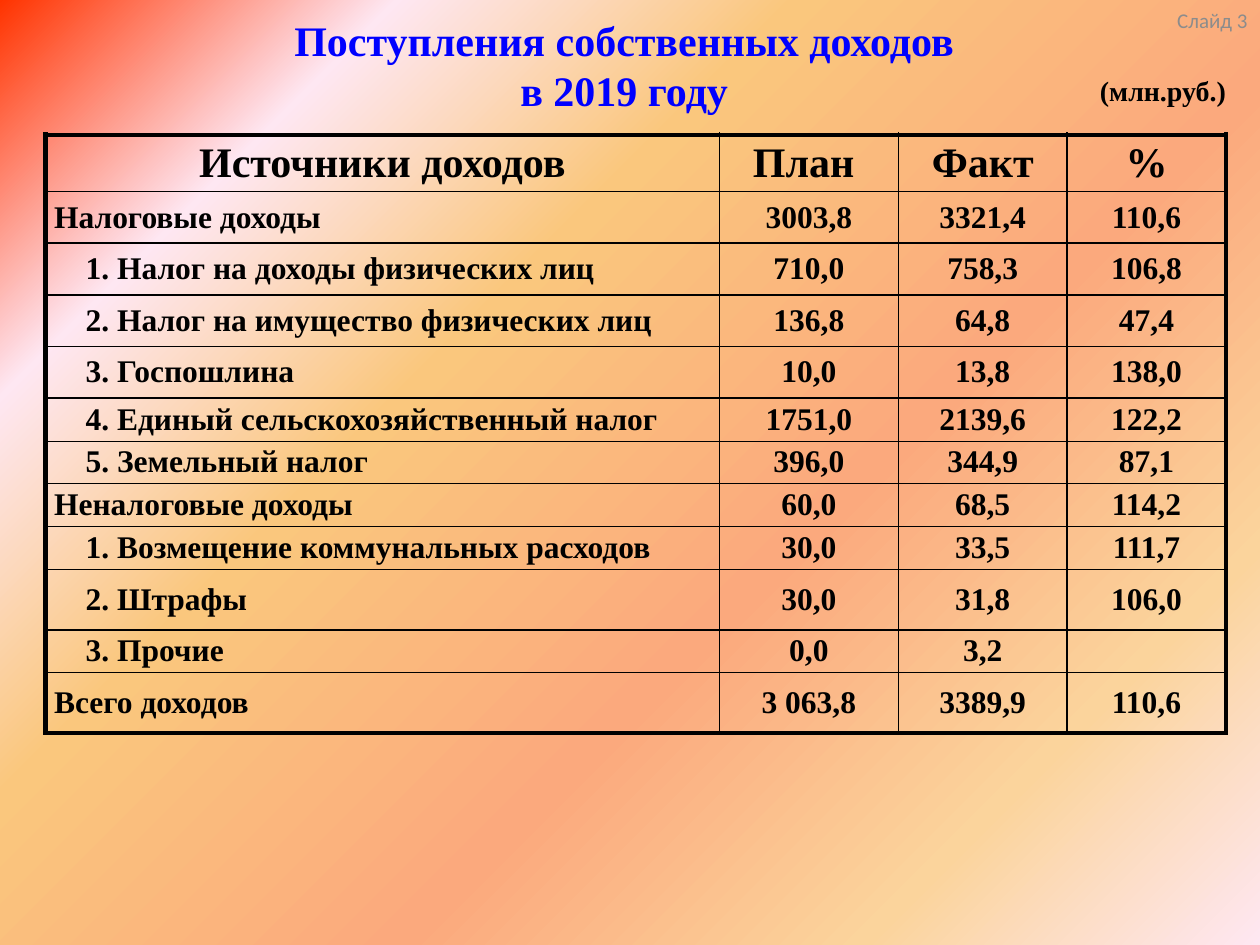
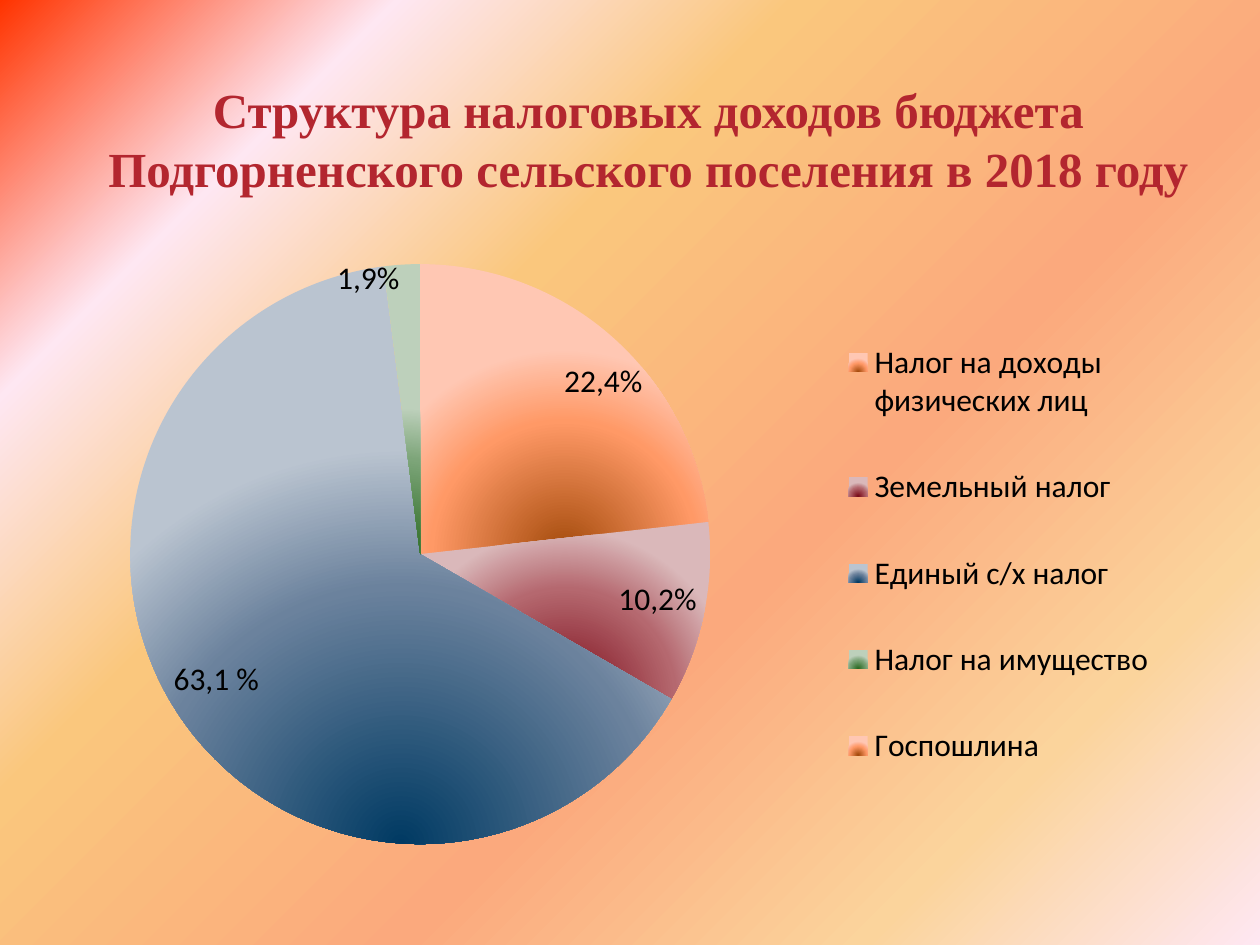
from dataclasses import dataclass

from lxml import etree
from pptx import Presentation
from pptx.chart.data import CategoryChartData
from pptx.dml.color import RGBColor
from pptx.enum import chart as charts, text
from pptx.oxml.ns import qn
from pptx.util import Inches, Pt

COLOURS = {"blue": "0000FF", "red": "B3262F", "black": "000000", "grey": "8C8C8C"}
BACKGROUND = [(0, "FF3300"), (18, "FEE7F2"), (36, "FAC77D"),
              (61, "FBA97D"), (82, "FBD49C"), (100, "FEE7F2")]
SERIF, SANS = "Times New Roman", "Calibri"
CENTRE, LEFT, RIGHT = text.PP_ALIGN.CENTER, text.PP_ALIGN.LEFT, text.PP_ALIGN.RIGHT
MIDDLE, TOP = text.MSO_ANCHOR.MIDDLE, text.MSO_ANCHOR.TOP


@dataclass
class Style:
    size: float
    colour: str = "black"
    font: str = SERIF
    bold: bool = True
    align: int = CENTRE


@dataclass
class IncomeRow:
    source: str
    plan: str
    fact: str
    percent: str
    height: float
    indent: float = 0
    rule: float = 1  # width of the line below, in points


@dataclass
class TaxSlice:
    name: str
    share: int
    label: str
    label_shift: tuple[float, float]  # fractions of the chart
    shades: tuple[str, str, str]  # from the centre of the glow outwards


ORANGE = ("A34A0B", "FF9966", "FFC7B3")
SUB = 0.25
INCOME = [
    IncomeRow("Источники доходов", "План ", "Факт", "%", 0.45),
    IncomeRow("Налоговые доходы", "3003,8", "3321,4", "110,6", 0.41),
    IncomeRow("1. Налог на доходы физических лиц", "710,0", "758,3", "106,8", 0.41, SUB),
    IncomeRow("2. Налог на имущество физических лиц", "136,8", "64,8", "47,4", 0.41, SUB),
    IncomeRow("3. Госпошлина", "10,0", "13,8", "138,0", 0.41, SUB),
    IncomeRow("4. Единый сельскохозяйственный налог", "1751,0", "2139,6", "122,2", 0.34, SUB, 0.5),
    IncomeRow("5. Земельный налог", "396,0", "344,9", "87,1", 0.34, SUB),
    IncomeRow("Неналоговые доходы", "60,0", "68,5", "114,2", 0.34),
    IncomeRow("1. Возмещение коммунальных расходов", "30,0", "33,5", "111,7", 0.34, SUB, 0.5),
    IncomeRow("2. Штрафы", "30,0", "31,8", "106,0", 0.48, SUB),
    IncomeRow("3. Прочие", "0,0", "3,2", "", 0.34, SUB),
    IncomeRow("Всего доходов", "3 063,8", "3389,9", "110,6", 0.48, 0, 3),
]
COLUMN_WIDTHS = [5.35, 1.42, 1.34, 1.26]
TAXES = [
    TaxSlice("Налог на доходы физических лиц", 23, "22,4%", (0.03, 0.03), ORANGE),
    TaxSlice("Земельный налог", 10, "10,2%", (0, 0.01), ("7A0A18", "B5686F", "DAB8BA")),
    TaxSlice("Единый с/х налог", 64, "63,1 %", (-0.01, -0.02), ("003A63", "6B829D", "BAC4D0")),
    TaxSlice("Налог на имущество", 2, "1,9%", (-0.03, -0.02), ("2A6A22", "7DA579", "BDD0BB")),
    TaxSlice("Госпошлина", 0, "0,3%", (0.02, -0.02), ORANGE),
]


def colour(name: str) -> RGBColor:
    return RGBColor.from_string(COLOURS[name])


def style_font(font, style: Style) -> None:
    font.name, font.size, font.bold = style.font, Pt(style.size), style.bold
    font.color.rgb = colour(style.colour)


def write(para, content: str, style: Style) -> None:
    """Fill a paragraph run by run, with a line break at each newline."""
    para.alignment = style.align
    for number, line in enumerate(content.split("\n")):
        if number:
            para.add_line_break()
        if line:
            span = para.add_run()
            span.text = line
            style_font(span.font, style)


def add_text(page, at: tuple, content: str, style: Style, anchor=MIDDLE):
    box = page.shapes.add_textbox(*map(Inches, at))
    frame = box.text_frame
    frame.word_wrap = True
    frame.vertical_anchor = anchor
    write(frame.paragraphs[0], content, style)
    return box


def replace_solid(root, stops: list, angle: int | None = None) -> None:
    """Turn the first solid fill in root into a linear gradient, or a glow from below."""
    solid = next(root.iter(qn("a:solidFill")))
    gradient = etree.Element(qn("a:gradFill"), rotWithShape="1")
    stop_list = etree.SubElement(gradient, qn("a:gsLst"))
    for position, value in stops:
        stop = etree.SubElement(stop_list, qn("a:gs"), pos=str(position * 1000))
        etree.SubElement(stop, qn("a:srgbClr"), val=value)
    if angle is None:
        glow = etree.SubElement(gradient, qn("a:path"), path="circle")
        etree.SubElement(glow, qn("a:fillToRect"), l="50000", t="100000", r="50000", b="0")
    else:
        etree.SubElement(gradient, qn("a:lin"), ang=str(angle * 60000), scaled="0")
    solid.getparent().replace(solid, gradient)


def add_page(deck):
    page = deck.slides.add_slide(deck.slide_layouts[6])
    fill = page.background.fill
    fill.solid()
    fill.fore_color.rgb = colour("black")
    replace_solid(page._element, BACKGROUND, angle=45)
    return page


def set_borders(cell, **widths: float) -> None:
    properties = cell._tc.get_or_add_tcPr()
    for side in "LRTB":
        line = etree.SubElement(properties, qn(f"a:ln{side}"), w=str(Pt(widths[side])))
        fill = etree.SubElement(line, qn("a:solidFill"))
        etree.SubElement(fill, qn("a:srgbClr"), val=COLOURS["black"])


def add_income_table(page) -> None:
    height = sum(row.height for row in INCOME)
    frame = page.shapes.add_table(len(INCOME), len(COLUMN_WIDTHS), Inches(0.36), Inches(1.07),
                                  Inches(sum(COLUMN_WIDTHS)), Inches(height))
    table = frame.table
    table.first_row = table.horz_banding = False
    for column, width in zip(table.columns, COLUMN_WIDTHS):
        column.width = Inches(width)
    last = len(COLUMN_WIDTHS) - 1
    for r, row in enumerate(INCOME):
        table.rows[r].height = Inches(row.height)
        for c, content in enumerate((row.source, row.plan, row.fact, row.percent)):
            cell = table.cell(r, c)
            set_borders(cell, L=3 if c == 0 else 1, R=3 if c == last else 1,
                        T=INCOME[r - 1].rule if r else 3, B=row.rule)
            cell.fill.background()
            cell.vertical_anchor = MIDDLE
            cell.margin_left = cell.margin_right = Inches(0.07)
            cell.margin_top = cell.margin_bottom = 0
            para = cell.text_frame.paragraphs[0]
            named = r > 0 and c == 0
            write(para, content, Style(18 if r else 24, align=LEFT if named else CENTRE))
            if named and row.indent:
                para._p.get_or_add_pPr().set("marL", str(Inches(row.indent)))


def manual_layout(target: str = "", mode: str = "edge", **fractions: float):
    """Chart layout element; without a mode, x and y shift the default place."""
    layout = etree.Element(qn("c:layout"))
    manual = etree.SubElement(layout, qn("c:manualLayout"))
    if target:
        etree.SubElement(manual, qn("c:layoutTarget"), val=target)
    if mode:
        for axis in "xy":
            etree.SubElement(manual, qn(f"c:{axis}Mode"), val=mode)
    for key, value in fractions.items():
        etree.SubElement(manual, qn(f"c:{key}"), val=str(value))
    return layout


def drop_layout(parent) -> None:
    for layout in parent.findall(qn("c:layout")):
        parent.remove(layout)


def add_tax_pie(page) -> None:
    data = CategoryChartData()
    data.categories = [tax.name for tax in TAXES]
    data.add_series("Series 1", [tax.share for tax in TAXES])
    chart = page.shapes.add_chart(charts.XL_CHART_TYPE.PIE, Inches(0.5), Inches(1.75),
                                  Inches(9), Inches(4.95), data).chart
    chart.has_title = False
    style = Style(18, font=SANS, bold=False)
    style_font(chart.font, style)

    plot = chart.plots[0]
    plot.vary_by_categories = True
    series = plot.series[0]
    for number, tax in enumerate(TAXES):
        point = series.points[number]
        point.format.fill.solid()
        point.format.fill.fore_color.rgb = RGBColor.from_string(tax.shades[1])
        point.format.line.fill.background()
        label = point.data_label
        write(label.text_frame.paragraphs[0], tax.label, style)
        label.position = charts.XL_LABEL_POSITION.INSIDE_END
    for tax, slice_element in zip(TAXES, series._element.findall(qn("c:dPt"))):
        replace_solid(slice_element, list(zip((0, 65, 100), tax.shades)))
    for tax, label_element in zip(TAXES, series._element.iter(qn("c:dLbl"))):
        drop_layout(label_element)
        shift_x, shift_y = tax.label_shift
        label_element.find(qn("c:idx")).addnext(manual_layout(mode="", x=shift_x, y=shift_y))

    area = chart._chartSpace.chart.plotArea
    drop_layout(area)
    area.insert(0, manual_layout("inner", x=0.04, y=0.07, w=0.55, h=0.93))

    chart.has_legend = True
    legend = chart.legend
    legend.position = charts.XL_LEGEND_POSITION.RIGHT
    legend.include_in_layout = False
    style_font(legend.font, style)
    drop_layout(legend._element)
    place = legend._element.find(qn("c:legendPos"))
    place.addnext(manual_layout(x=0.67, y=0.12, w=0.31, h=0.83))


def build_income_page(deck) -> None:
    page = add_page(deck)
    add_text(page, (0.27, 0.12, 9.45, 0.79), "Поступления собственных доходов \nв 2019 году ",
             Style(24, "blue"))
    add_text(page, (8.62, 0.52, 1.22, 0.39), "(млн.руб.)", Style(16))
    add_text(page, (9.17, 0.01, 0.83, 0.52), "Слайд 3",
             Style(12, "grey", SANS, False, RIGHT), TOP)
    add_income_table(page)


def build_structure_page(deck) -> None:
    page = add_page(deck)
    title = add_text(page, (0.7, 0.55, 8.89, 1.83),
                     "Структура налоговых доходов бюджета "
                     "Подгорненского сельского поселения в 2018 году", Style(28, "red"))
    title.text_frame.margin_bottom = Inches(0.78)
    add_tax_pie(page)


def main() -> None:
    deck = Presentation()
    deck.slide_width, deck.slide_height = Inches(10), Inches(7.5)
    build_income_page(deck)
    build_structure_page(deck)
    deck.save("out.pptx")


if __name__ == "__main__":
    main()
